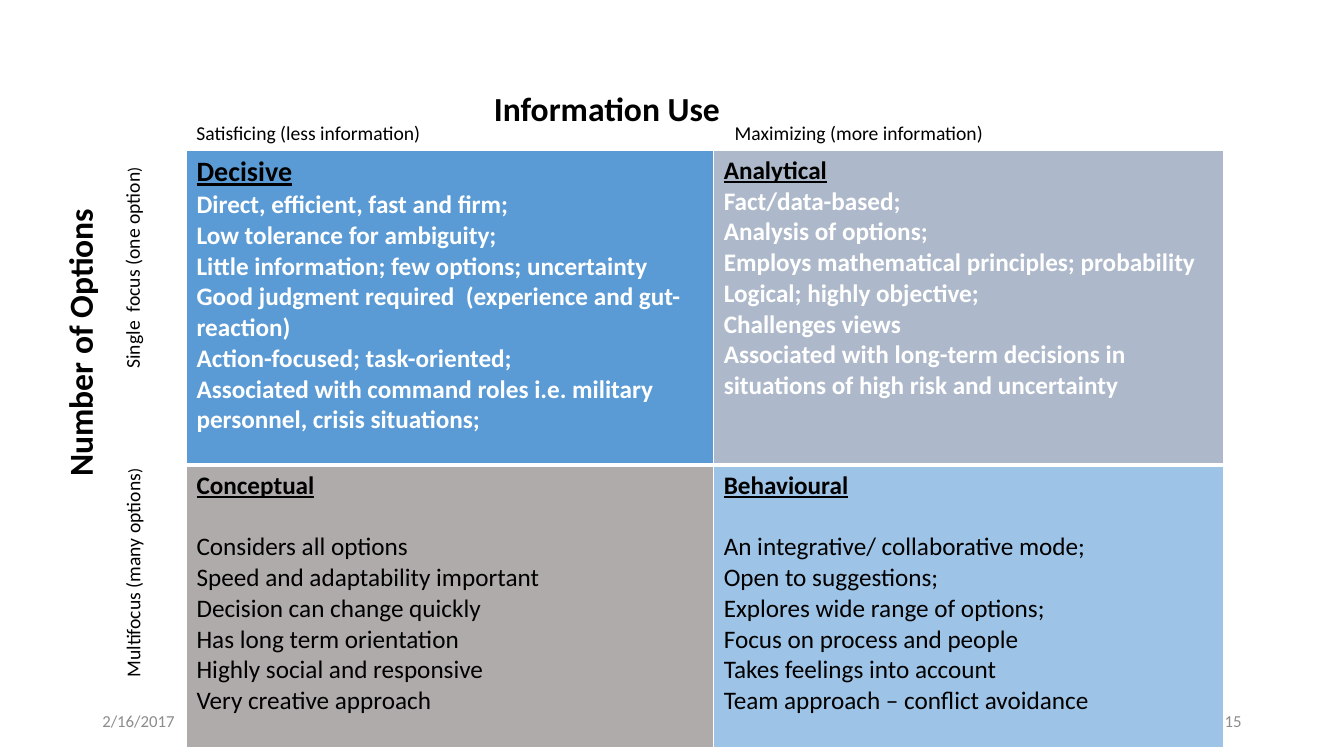
"""Build a slide with the two-by-two matrix of decision-making styles."""
import dataclasses

import pptx
import pptx.dml.color
import pptx.enum.text
import pptx.oxml
import pptx.oxml.ns
import pptx.util

Pt = pptx.util.Pt
ALIGN = pptx.enum.text.PP_ALIGN
ANCHOR = pptx.enum.text.MSO_ANCHOR


@dataclasses.dataclass(frozen=True)
class Theme:
    font: str = "Calibri"
    black: str = "000000"
    white: str = "FFFFFF"
    footer: str = "8C8C8C"
    decisive: str = "5B9BD5"
    analytical: str = "ADB9CA"
    conceptual: str = "AFABAB"
    behavioural: str = "9DC3E6"
    axis_size: int = 24
    lead_size: int = 20
    body_size: int = 18
    label_size: int = 14
    small_size: int = 12


@dataclasses.dataclass(frozen=True)
class Style:
    name: str
    fill: str
    lines: tuple
    color: str = Theme.black
    bold: bool = False
    name_size: int = Theme.body_size
    gap: float = 0


THEME = Theme()
LINE_GAP = 22
COLUMN_WIDTHS = (376.6, 364.3)
ROW_HEIGHTS = (225, 202)
STYLES = (
    (
        Style("Decisive", THEME.decisive, (
            "Direct, efficient, fast and firm;",
            "Low tolerance for ambiguity;",
            "Little information; few options; uncertainty",
            "Good judgment required  (experience and gut-reaction)",
            "Action-focused; task-oriented;",
            "Associated with command roles i.e. military personnel, crisis situations;",
        ), THEME.white, True, THEME.lead_size),
        Style("Analytical", THEME.analytical, (
            "Fact/data-based;",
            "Analysis of options;",
            "Employs mathematical principles; probability",
            "Logical; highly objective;",
            "Challenges views",
            "Associated with long-term decisions in situations of high risk and uncertainty",
        ), THEME.white, True),
    ),
    (
        Style("Conceptual", THEME.conceptual, (
            "Considers all options",
            "Speed and adaptability important",
            "Decision can change quickly",
            "Has long term orientation",
            "Highly social and responsive",
            "Very creative approach",
        ), gap=LINE_GAP),
        Style("Behavioural", THEME.behavioural, (
            "An integrative/ collaborative mode;",
            "Open to suggestions;",
            "Explores wide range of options;",
            "Focus on process and people",
            "Takes feelings into account",
            "Team approach – conflict avoidance",
        ), gap=LINE_GAP),
    ),
)


def format_span(span, size, color=THEME.black, bold=False, underline=False):
    """Apply the type style to one run."""
    span.font.name = THEME.font
    span.font.size = Pt(size)
    span.font.bold = bold
    span.font.underline = underline
    span.font.color.rgb = pptx.dml.color.RGBColor.from_string(color)


def add_text(page, frame, text, size, color=THEME.black, bold=False,
             align=ALIGN.LEFT, rotation=0, anchor=ANCHOR.TOP):
    """Add a one-line text box and return its paragraph."""
    box = page.shapes.add_textbox(*map(Pt, frame))
    box.rotation = rotation
    box.text_frame.word_wrap = True
    box.text_frame.vertical_anchor = anchor
    box.text_frame.text = text
    para = box.text_frame.paragraphs[0]
    para.alignment = align
    format_span(para.runs[0], size, color, bold)
    return para


def add_focus_label(page, frame, text):
    """Add an upright row label that ends in a smaller bracket."""
    para = add_text(page, frame, text, THEME.label_size, rotation=270)
    bracket = para.add_run()
    bracket.text = ")"
    format_span(bracket, THEME.small_size)


def set_borders(cell, widths):
    """Draw white cell borders with a width in points for each side."""
    properties = cell._tc.get_or_add_tcPr()
    for index, (side, width) in enumerate(widths.items()):
        line = pptx.oxml.parse_xml(
            f'<a:{side} {pptx.oxml.ns.nsdecls("a")} w="{Pt(width)}"><a:solidFill>'
            f'<a:srgbClr val="{THEME.white}"/></a:solidFill></a:{side}>')
        properties.insert(index, line)


def fill_cell(cell, style):
    """Write one decision style into its table cell."""
    cell.fill.solid()
    cell.fill.fore_color.rgb = pptx.dml.color.RGBColor.from_string(style.fill)
    cell.text_frame.text = "\n".join((style.name, *style.lines))
    heading, *details = cell.text_frame.paragraphs
    heading.space_after = Pt(style.gap)
    format_span(heading.runs[0], style.name_size, bold=True, underline=True)
    for para in details:
        format_span(para.runs[0], THEME.body_size, style.color, style.bold)


def add_matrix(page):
    """Add the table of decision styles."""
    table = page.shapes.add_table(
        len(ROW_HEIGHTS), len(COLUMN_WIDTHS), Pt(133.2), Pt(107.3),
        Pt(sum(COLUMN_WIDTHS)), Pt(sum(ROW_HEIGHTS))).table
    for column, width in zip(table.columns, COLUMN_WIDTHS):
        column.width = Pt(width)
    for index, (row, height) in enumerate(zip(table.rows, ROW_HEIGHTS)):
        row.height = Pt(height)
        top, bottom = (1, 3) if index == 0 else (3, 1)
        for cell, style in zip(row.cells, STYLES[index]):
            fill_cell(cell, style)
            set_borders(cell, {"lnL": 1, "lnR": 1, "lnT": top, "lnB": bottom})


def main():
    """Build and save the slide."""
    deck = pptx.Presentation()
    deck.slide_width, deck.slide_height = Pt(960), Pt(540)
    page = deck.slides.add_slide(deck.slide_layouts[6])
    add_matrix(page)
    add_text(page, (-54.7, 226.8, 223.2, 36), "Number of Options", THEME.axis_size,
             bold=True, align=ALIGN.CENTER, rotation=270)
    add_text(page, (203.8, 59, 459.4, 36), "Information Use", THEME.axis_size,
             bold=True, align=ALIGN.CENTER)
    add_focus_label(page, (7.9, 391.7, 174.2, 24.5), "Multifocus (many options")
    add_focus_label(page, (-3.6, 159.8, 196.6, 24.5), "Single  focus (one option")
    add_text(page, (133.2, 82.8, 178.6, 24.5), "Satisficing (less information)",
             THEME.label_size)
    add_text(page, (517.7, 82.8, 260.6, 24.5), "Maximizing (more information)",
             THEME.label_size)
    for left, text, align in ((66, "2/16/2017", ALIGN.LEFT), (678, "15", ALIGN.RIGHT)):
        add_text(page, (left, 500.5, 216, 28.8), text, THEME.small_size,
                 THEME.footer, align=align, anchor=ANCHOR.MIDDLE)
    deck.save("out.pptx")


if __name__ == "__main__":
    main()
